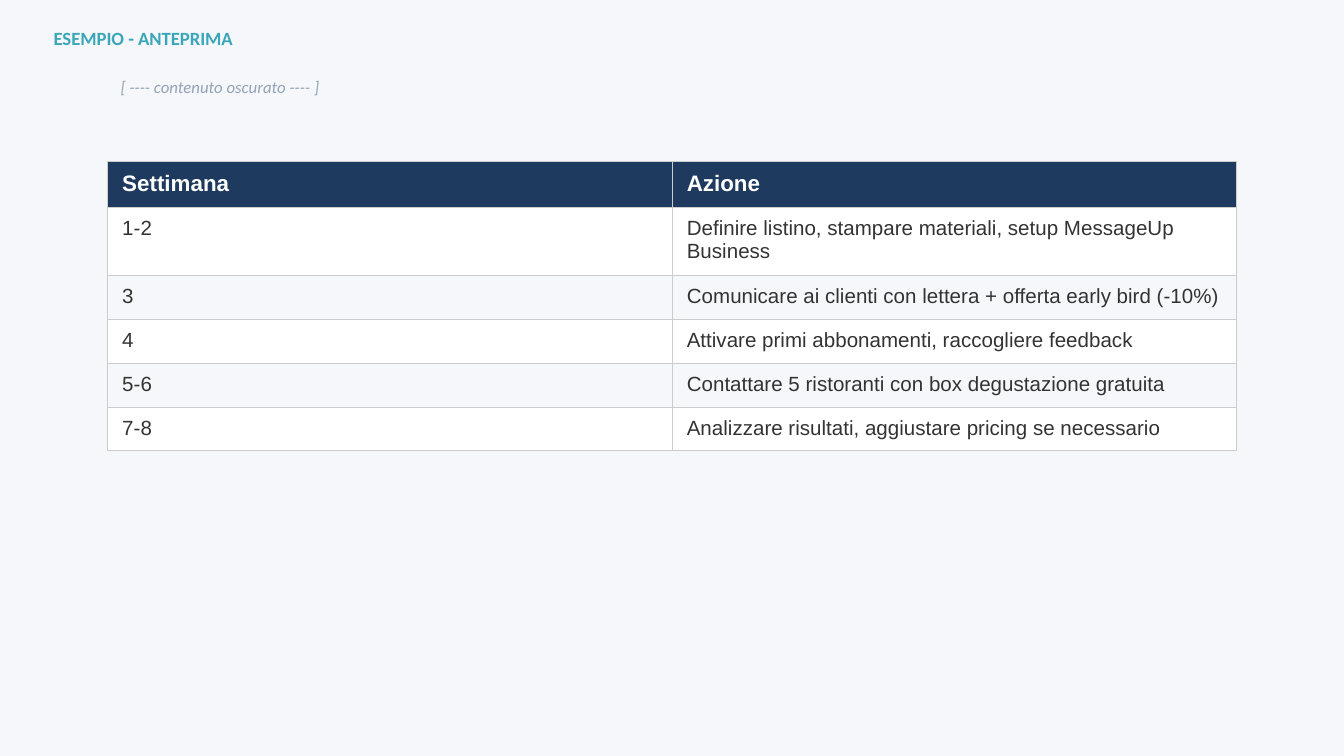
"""Build the weekly action plan slide."""
from typing import NamedTuple

from lxml import etree
from pptx import Presentation
from pptx.dml.color import RGBColor
from pptx.enum import text as t
from pptx.oxml import ns
from pptx.util import Cm, Pt

BACKGROUND = RGBColor(0xF5, 0xF7, 0xFA)
NAVY = RGBColor(0x1E, 0x3A, 0x5F)
TEAL = RGBColor(0x3A, 0xA6, 0xB9)
SLATE = RGBColor(0x94, 0xA3, 0xB8)
INK = RGBColor(0x33, 0x33, 0x33)
BORDER = RGBColor(0xCC, 0xCC, 0xCC)
WHITE = RGBColor(0xFF, 0xFF, 0xFF)


class Step(NamedTuple):
    week: str
    action: str
    height: float = 0.82


HEADER = Step("Settimana", "Azione", 0.84)
STEPS = [
    Step("1-2", "Definire listino, stampare materiali, setup MessageUp Business", 1.28),
    Step("3", "Comunicare ai clienti con lettera + offerta early bird (-10%)"),
    Step("4", "Attivare primi abbonamenti, raccogliere feedback"),
    Step("5-6", "Contattare 5 ristoranti con box degustazione gratuita"),
    Step("7-8", "Analizzare risultati, aggiustare pricing se necessario"),
]


def write(frame, content: str, *, size: float, color: RGBColor, name: str = "Calibri",
          bold: bool = False, italic: bool = False) -> None:
    paragraph = frame.paragraphs[0]
    paragraph.alignment = t.PP_ALIGN.LEFT
    run = paragraph.add_run()
    run.text = content
    font = run.font
    font.name, font.size, font.bold, font.italic = name, Pt(size), bold, italic
    font.color.rgb = color


def place(shape, left: float, top: float, width: float, height: float) -> None:
    shape.left, shape.top = Cm(left), Cm(top)
    shape.width, shape.height = Cm(width), Cm(height)


def add_borders(cell) -> None:
    properties = cell._tc.get_or_add_tcPr()
    for side in ("a:lnL", "a:lnR", "a:lnT", "a:lnB"):
        line = etree.SubElement(properties, ns.qn(side), w=str(Pt(0.5)))
        fill = etree.SubElement(line, ns.qn("a:solidFill"))
        etree.SubElement(fill, ns.qn("a:srgbClr"), val=str(BORDER))


def format_cell(cell, content: str, fill: RGBColor, **font) -> None:
    cell.margin_left = cell.margin_right = Cm(0.28)
    cell.margin_top = cell.margin_bottom = Cm(0.18)
    add_borders(cell)
    cell.fill.solid()
    cell.fill.fore_color.rgb = fill
    write(cell.text_frame, content, name="Arial", **font)


def add_plan(slide, steps: list[Step]) -> None:
    rows = [HEADER, *steps]
    table = slide.shapes.add_table(
        len(rows), 2, Cm(2.03), Cm(3.05), Cm(21.34), Cm(sum(row.height for row in rows))).table
    table.first_row = table.horz_banding = False
    for index, step in enumerate(rows):
        table.rows[index].height = Cm(step.height)
        if index == 0:
            fill, font = NAVY, {"size": 12, "color": WHITE, "bold": True}
        else:
            fill, font = (WHITE if index % 2 else BACKGROUND), {"size": 11, "color": INK}
        for column, content in enumerate((step.week, step.action)):
            format_cell(table.cell(index, column), content, fill, **font)


def main() -> None:
    presentation = Presentation()
    presentation.slide_width, presentation.slide_height = Cm(25.4), Cm(14.29)
    slide = presentation.slides.add_slide(presentation.slide_layouts[5])
    slide.background.fill.solid()
    slide.background.fill.fore_color.rgb = BACKGROUND

    title = slide.shapes.title
    place(title, 0.76, 0.38, 7.62, 0.89)
    frame = title.text_frame
    frame.word_wrap = False
    frame.auto_size = t.MSO_AUTO_SIZE.SHAPE_TO_FIT_TEXT
    frame.vertical_anchor = t.MSO_ANCHOR.TOP
    write(frame, "ESEMPIO - ANTEPRIMA", size=10, color=TEAL, bold=True)

    note = slide.shapes.add_textbox(Cm(2.03), Cm(0.76), Cm(21.34), Cm(1.78)).text_frame
    note.word_wrap = True
    note.vertical_anchor = t.MSO_ANCHOR.MIDDLE
    write(note, "[ ---- contenuto oscurato ---- ]", size=9, color=SLATE, italic=True)

    add_plan(slide, STEPS)
    presentation.save("out.pptx")


if __name__ == "__main__":
    main()
